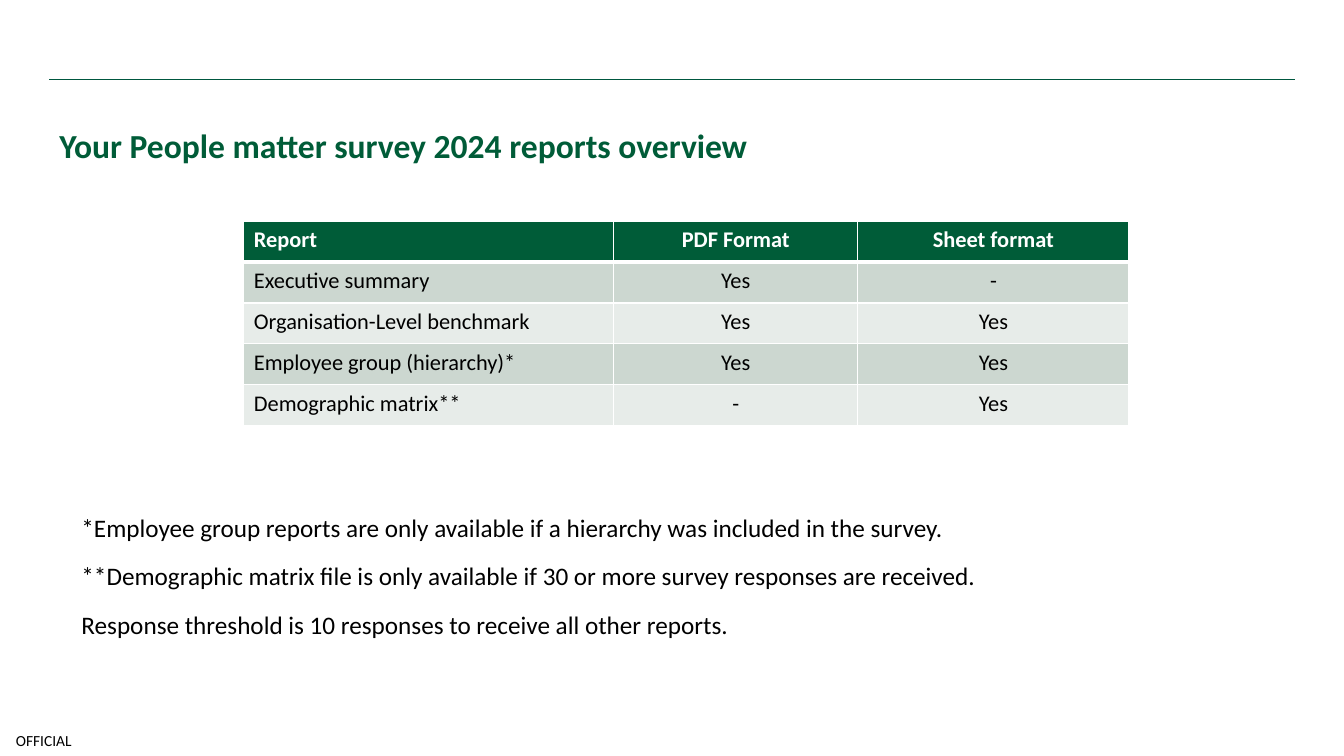
from lxml import etree
from pptx import Presentation
from pptx.dml.color import RGBColor
from pptx.enum.shapes import MSO_CONNECTOR
from pptx.enum.text import MSO_ANCHOR, PP_ALIGN
from pptx.oxml.ns import qn
from pptx.util import Pt

LEFT, CENTER = PP_ALIGN.LEFT, PP_ALIGN.CENTER
TOP, MIDDLE = MSO_ANCHOR.TOP, MSO_ANCHOR.MIDDLE
STRAIGHT = MSO_CONNECTOR.STRAIGHT
FONT = "Calibri"
GREEN, RULE, BLACK, WHITE = "005C38", "00573F", "000000", "FFFFFF"
BANDS = "CCD7D0", "E7ECE9"

REPORTS = [
    ("Report", "PDF Format", "Sheet format"),
    ("Executive summary", "Yes", "-"),
    ("Organisation-Level benchmark", "Yes", "Yes"),
    ("Employee group (hierarchy)*", "Yes", "Yes"),
    ("Demographic matrix**", "-", "Yes"),
]
NOTES = [
    "*Employee group reports are only available if a hierarchy was included in the survey.",
    "**Demographic matrix file is only available if 30 or more survey responses are received.",
    "Response threshold is 10 responses to receive all other reports.",
]


def color(code):
    return RGBColor.from_string(code)


def write(par, text, size, code, bold=False, align=LEFT):
    par.alignment = align
    run = par.add_run()
    run.text = text
    font = run.font
    font.name, font.size, font.bold = FONT, Pt(size), bold
    font.color.rgb = color(code)


def add_box(slide, box, anchor):
    frame = slide.shapes.add_textbox(*map(Pt, box)).text_frame
    frame.word_wrap = True
    frame.vertical_anchor = anchor
    return frame


def add_rule(slide, left, right, y):
    line = slide.shapes.add_connector(STRAIGHT, Pt(left), Pt(y), Pt(right), Pt(y))
    line.line.color.rgb = color(RULE)
    line.line.width = Pt(1)
    etree.SubElement(line._element.spPr, qn("a:effectLst"))


def add_title(slide, box):
    par = add_box(slide, box, MIDDLE).paragraphs[0]
    par.line_spacing = 1.2
    write(par, "Your People matter survey 2024 reports overview", 24, GREEN, True)


def add_edges(cell, widths):
    """Draw white borders; widths maps each side's letter to points."""
    props = cell._tc.get_or_add_tcPr()
    for side, width in widths.items():
        edge = etree.SubElement(props, qn("a:ln" + side), w=str(Pt(width)))
        fill = etree.SubElement(edge, qn("a:solidFill"))
        etree.SubElement(fill, qn("a:srgbClr"), val=WHITE)


def add_reports(slide, box, widths):
    shape = slide.shapes.add_table(len(REPORTS), len(widths), *map(Pt, box))
    table = shape.table
    for col, width in zip(table.columns, widths):
        col.width = Pt(width)
    for r, values in enumerate(REPORTS):
        table.rows[r].height = Pt(box[3] / len(REPORTS))
        head = r == 0
        for c, text in enumerate(values):
            cell = table.cell(r, c)
            add_edges(cell, {"L": 1, "R": 1, "T": 3 if r == 1 else 1, "B": 3 if head else 1})
            cell.fill.solid()
            cell.fill.fore_color.rgb = color(GREEN if head else BANDS[(r - 1) % 2])
            write(cell.text_frame.paragraphs[0], text, 16, WHITE if head else BLACK,
                  head, CENTER if c else LEFT)


def add_notes(slide, box):
    frame = add_box(slide, box, TOP)
    for i, text in enumerate(NOTES):
        par = frame.add_paragraph() if i else frame.paragraphs[0]
        par.line_spacing, par.space_after = 1.2, Pt(9)
        write(par, text, 18, BLACK)


def add_mark(slide, box):
    frame = add_box(slide, box, MIDDLE)
    frame.margin_left = frame.margin_right = frame.margin_top = frame.margin_bottom = 0
    write(frame.paragraphs[0], "OFFICIAL", 11, BLACK, align=CENTER)


def main():
    deck = Presentation()
    deck.slide_width, deck.slide_height = Pt(960), Pt(540)
    slide = deck.slides.add_slide(deck.slide_layouts[6])
    add_rule(slide, 35.3, 925.2, 56.6)
    add_mark(slide, (0, 517.7, 62.6, 22.3))
    add_title(slide, (35.3, 64.1, 645.8, 73.4))
    add_reports(slide, (174.2, 158, 632.3, 146), (264.2, 174.4, 193.7))
    add_notes(slide, (51.1, 357.8, 830.9, 133.2))
    deck.save("out.pptx")


if __name__ == "__main__":
    main()
